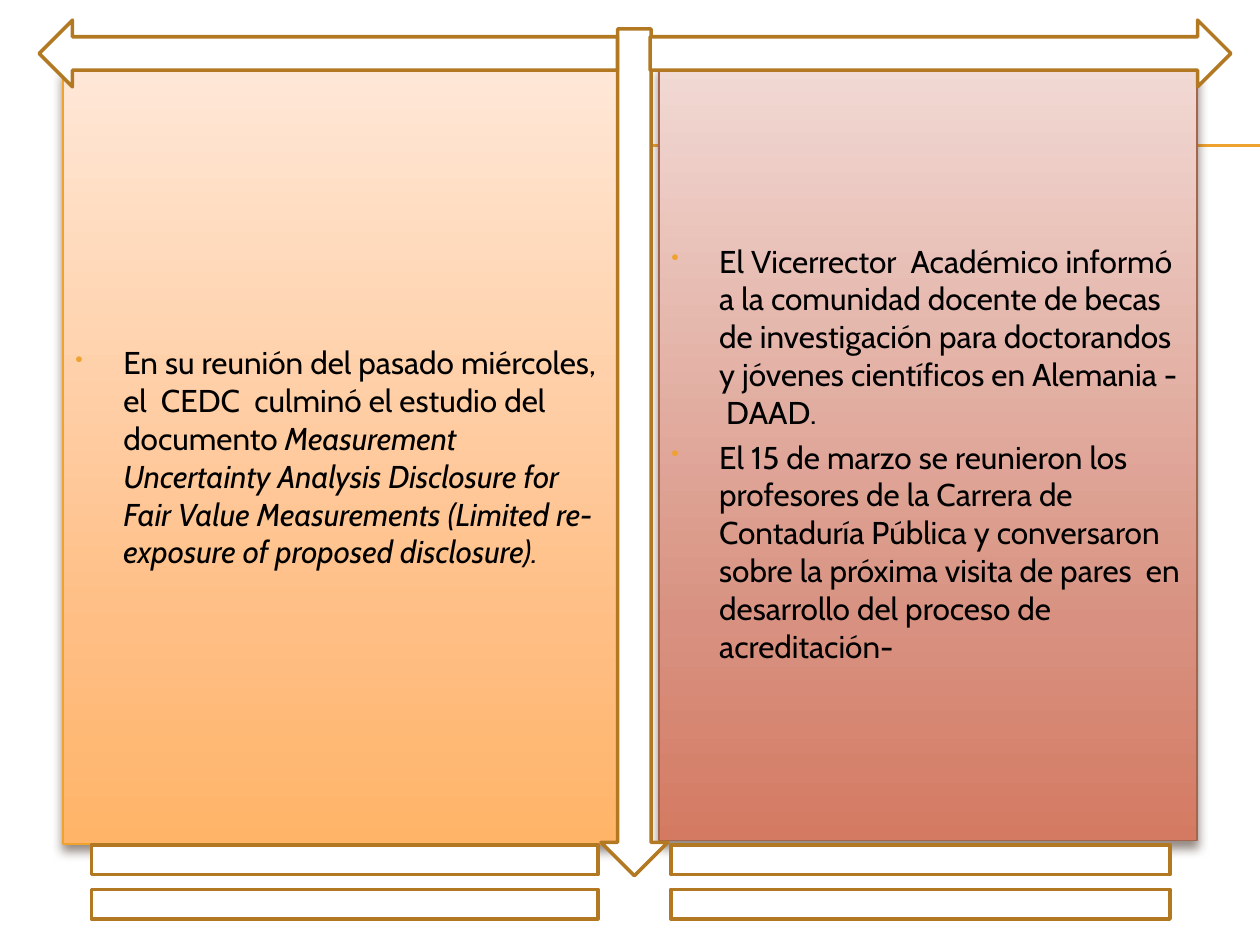
from copy import deepcopy
from pptx import Presentation
from pptx.dml.color import RGBColor
from pptx.enum.shapes import MSO_CONNECTOR, MSO_SHAPE
from pptx.enum.text import MSO_ANCHOR, PP_ALIGN
from pptx.oxml.ns import qn
from pptx.util import Inches, Pt
from lxml.etree import SubElement

WIDE, HIGH = 10, 7.5
AMBER, BROWN, RUST = "F0A22E", "B27822", "A5644E"


def rgb(code):
    return RGBColor.from_string(code)


def node(parent, tag, **attrs):
    return SubElement(parent, qn(tag), {k: str(v) for k, v in attrs.items()})


def rule(slide, left, y):
    line = slide.shapes.add_connector(
        MSO_CONNECTOR.STRAIGHT, Inches(left), Inches(y), Inches(WIDE), Inches(y))
    line.line.color.rgb = rgb(AMBER)
    line.line.width = Pt(0.75)
    node(line._element.spPr, "a:effectLst")


def block(slide, kind, box, edge, weight):
    shape = slide.shapes.add_shape(kind, *(Inches(v) for v in box))
    shape.shadow.inherit = False
    shape.line.color.rgb = rgb(edge)
    shape.line.width = Pt(weight)
    return shape


def shade(shape, colors):
    """Fill with a vertical three-stop gradient."""
    fill = shape.fill
    fill.gradient()
    fill.gradient_angle = 270
    stops = next(shape._element.spPr.iter(qn("a:gsLst")))
    stops.append(deepcopy(stops[-1]))
    for stop, color, place in zip(fill.gradient_stops, colors, (0, 0.72, 1)):
        stop.color.rgb = rgb(color)
        stop.position = place


def cast(shape):
    """Add a soft shadow below the shape."""
    effects = shape._element.spPr.find(qn("a:effectLst"))
    outer = node(effects, "a:outerShdw", blurRad=Pt(6), dist=Pt(4),
                 dir=90 * 60000, rotWithShape=0)
    node(node(outer, "a:srgbClr", val="4E3B30"), "a:alpha", val=60000)


def bullet(para):
    props = para._p.get_or_add_pPr()
    props.set("marL", str(Inches(0.38)))
    props.set("indent", str(-Inches(0.38)))
    node(node(props, "a:buClr"), "a:srgbClr", val=AMBER)
    node(props, "a:buSzPct", val=70000)
    node(props, "a:buChar", char="•")


def panel(slide, box, colors, edge, items):
    shape = block(slide, MSO_SHAPE.RECTANGLE, box, edge, 0.79)
    shade(shape, colors)
    cast(shape)
    frame = shape.text_frame
    frame.word_wrap = True
    frame.vertical_anchor = MSO_ANCHOR.MIDDLE
    for i, runs in enumerate(items):
        para = frame.add_paragraph() if i else frame.paragraphs[0]
        bullet(para)
        para.alignment = PP_ALIGN.LEFT
        para.space_before = Pt(4 if i else 0)
        for text, slant in runs:
            run = para.add_run()
            run.text = text
            font = run.font
            font.name, font.size, font.italic = "Cabin", Pt(18), slant
            font.color.rgb = rgb("000000")


def scale(slide):
    """Draw the arrows and the equal signs that frame the panels."""
    thick = 0.53
    signs = (
        (MSO_SHAPE.DOWN_ARROW, (4.77, 0.23, thick, 6.72)),
        (MSO_SHAPE.RIGHT_ARROW, (5.16, 0.16, 4.61, thick)),
        (MSO_SHAPE.LEFT_ARROW, (0.31, 0.16, 4.59, thick)),
        (MSO_SHAPE.MATH_EQUAL, (0, HIGH - 1, 5.47, 1)),
        (MSO_SHAPE.MATH_EQUAL, (4.61, HIGH - 1, WIDE - 4.61, 1)),
    )
    for kind, box in signs:
        shape = block(slide, kind, box, BROWN, 2)
        shape.fill.solid()
        shape.fill.fore_color.rgb = rgb("FFFFFF")


LEFT = [[
    ("En su reunión del pasado miércoles, el  CEDC  culminó el estudio "
     "del documento ", False),
    ("Measurement Uncertainty Analysis Disclosure for Fair Value Measurements "
     "(Limited re-exposure of proposed disclosure).", True),
]]
RIGHT = [
    [("El Vicerrector  Académico informó a la comunidad docente de becas de "
      "investigación para doctorandos y jóvenes científicos en Alemania "
      "-  DAAD.", False)],
    [("El 15 de marzo se reunieron los profesores de la Carrera de Contaduría "
      "Pública y conversaron sobre la próxima visita de pares  en desarrollo "
      "del proceso de acreditación-", False)],
]


def main():
    deck = Presentation()
    deck.slide_width, deck.slide_height = Inches(WIDE), Inches(HIGH)
    slide = deck.slides.add_slide(deck.slide_layouts[6])
    for y in (1.15, 1.16):
        rule(slide, 0.56, y)
    panel(slide, (0.5, 0.55, 4.42, 6.15), ("FFE7D7", "FFBE84", "FFB468"),
          AMBER, LEFT)
    panel(slide, (5.23, 0.52, 4.27, 6.15), ("F1D9D4", "D89180", "D47A62"),
          RUST, RIGHT)
    scale(slide)
    deck.save("out.pptx")


if __name__ == "__main__":
    main()
